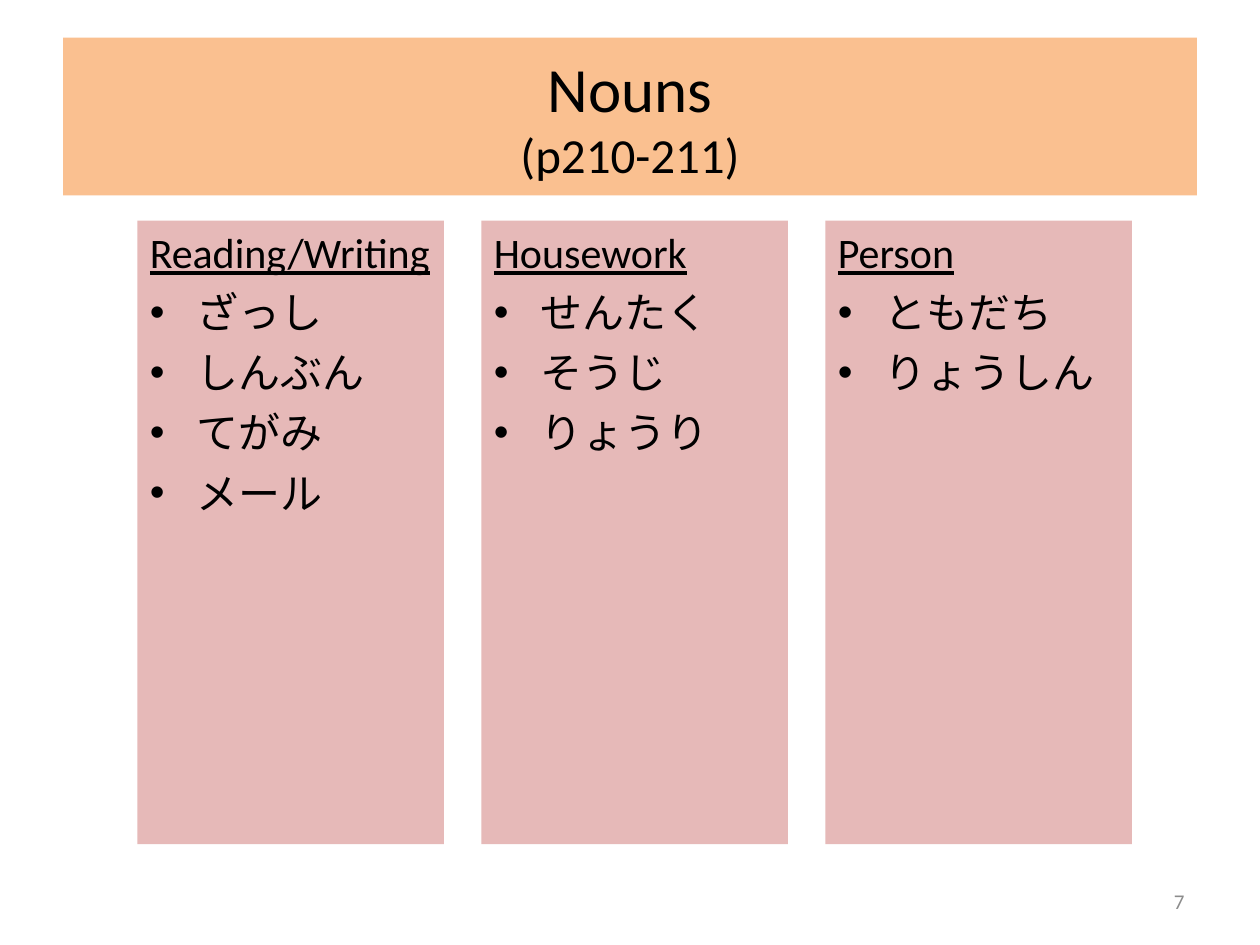
from lxml import etree
from pptx import Presentation
from pptx.dml.color import RGBColor
from pptx.enum.shapes import MSO_SHAPE
from pptx.enum.text import MSO_ANCHOR, MSO_AUTO_SIZE, PP_ALIGN
from pptx.oxml.ns import qn
from pptx.util import Cm, Pt

RECTANGLE = MSO_SHAPE.RECTANGLE
TOP, MIDDLE = MSO_ANCHOR.TOP, MSO_ANCHOR.MIDDLE
LEFT, CENTER, RIGHT = PP_ALIGN.LEFT, PP_ALIGN.CENTER, PP_ALIGN.RIGHT
NO_AUTOFIT = MSO_AUTO_SIZE.NONE

COLORS = {"title": "FAC090", "column": "E6B9B8", "text": "000000", "number": "8C8C8C"}
LATIN, JAPANESE = "Calibri", "Roboto"
INDENT = Cm(0.95)
COLUMNS = [
    ("Reading/Writing", ["ざっし", "しんぶん", "てがみ", "メール"]),
    ("Housework", ["せんたく", "そうじ", "りょうり"]),
    ("Person", ["ともだち", "りょうしん"]),
]


def apply(target, values):
    """Set each attribute of the target from a dict."""
    for name, value in values.items():
        setattr(target, name, value)


def fill(shape, color):
    """Give the shape a solid fill."""
    shape.fill.solid()
    shape.fill.fore_color.rgb = RGBColor.from_string(COLORS[color])


def add_run(paragraph, text, size, color="text", font=LATIN, underline=False):
    """Append a formatted run to the paragraph."""
    run = paragraph.add_run()
    run.text = text
    apply(run.font, {"size": Pt(size), "name": font, "underline": underline})
    run.font.color.rgb = RGBColor.from_string(COLORS[color])
    return run


def place_title(slide, left, top, width, height):
    """Place the title with its page reference on a second line."""
    title = slide.shapes.title
    apply(title, {"left": left, "top": top, "width": width, "height": height})
    fill(title, "title")
    apply(title.text_frame, {"vertical_anchor": MIDDLE, "auto_size": NO_AUTOFIT})
    paragraph = title.text_frame.paragraphs[0]
    paragraph.alignment = CENTER
    add_run(paragraph, "Nouns", 36)
    paragraph.add_line_break()
    add_run(paragraph, "(p210-211)", 28)


def add_bullet(paragraph):
    """Give the paragraph a hanging round bullet."""
    properties = paragraph._p.get_or_add_pPr()
    properties.set("marL", str(INDENT))
    properties.set("indent", str(-INDENT))
    etree.SubElement(properties, qn("a:buFont")).set("typeface", "Arial")
    etree.SubElement(properties, qn("a:buChar")).set("char", "•")


def add_column(slide, left, top, width, height, heading, words):
    """Draw a word list under an underlined heading."""
    column = slide.shapes.add_shape(RECTANGLE, left, top, width, height)
    column.shadow.inherit = False
    column.line.fill.background()
    fill(column, "column")
    frame = column.text_frame
    apply(frame, {"word_wrap": True, "vertical_anchor": TOP, "margin_right": Cm(0.1)})
    paragraph = frame.paragraphs[0]
    apply(paragraph, {"alignment": LEFT, "space_before": Pt(5.5)})
    add_run(paragraph, heading, 24, underline=True)
    for word in words:
        paragraph = frame.add_paragraph()
        apply(paragraph, {"alignment": LEFT, "space_before": Pt(5.5)})
        add_bullet(paragraph)
        run = add_run(paragraph, word, 24, font=JAPANESE)
        etree.SubElement(run._r.rPr, qn("a:ea")).set("typeface", JAPANESE)


def add_columns(slide, left, top, width, height):
    """Spread the word lists evenly over the given box."""
    column_width = Cm(6.18)
    pitch = (width - column_width) // (len(COLUMNS) - 1)
    for index, (heading, words) in enumerate(COLUMNS):
        add_column(slide, left + index * pitch, top, column_width, height, heading, words)


def add_slide_number(slide, left, top, width, height):
    """Write the slide number at the right of the box."""
    frame = slide.shapes.add_textbox(left, top, width, height).text_frame
    apply(frame, {"word_wrap": True, "vertical_anchor": MIDDLE})
    paragraph = frame.paragraphs[0]
    paragraph.alignment = RIGHT
    add_run(paragraph, "7", 12, "number")


def main():
    """Build the vocabulary slide and save it."""
    presentation = Presentation()
    apply(presentation, {"slide_width": Cm(25.4), "slide_height": Cm(19.05)})
    slide = presentation.slides.add_slide(presentation.slide_layouts.get_by_name("Title Only"))
    place_title(slide, Cm(1.27), Cm(0.76), Cm(22.86), Cm(3.18))
    add_columns(slide, Cm(2.77), Cm(4.45), Cm(20.05), Cm(12.57))
    add_slide_number(slide, Cm(18.2), Cm(17.66), Cm(5.93), Cm(1.01))
    presentation.save("out.pptx")


if __name__ == "__main__":
    main()
